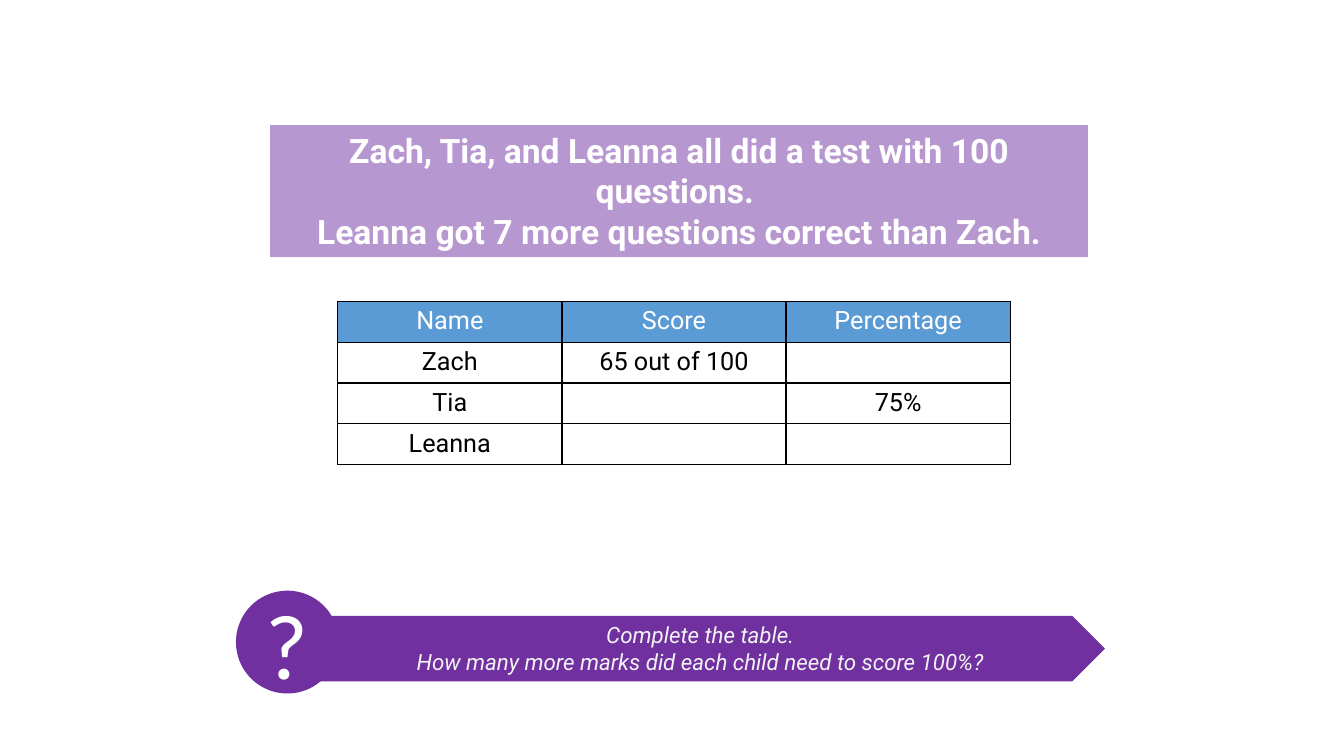
from lxml.etree import SubElement
from pptx import Presentation
from pptx.dml.color import RGBColor
from pptx.enum.shapes import MSO_SHAPE
from pptx.enum.text import MSO_ANCHOR, MSO_AUTO_SIZE, PP_ALIGN
from pptx.oxml import parse_xml
from pptx.oxml.ns import nsdecls, qn
from pptx.util import Inches, Pt

HEAD = ["Zach, Tia, and Leanna all did a test with 100 questions. ",
        "Leanna got 7 more questions correct than Zach."]
ROWS = [("Name", "Score", "Percentage"),
        ("Zach", "65 out of 100", ""),
        ("Tia", "", "75%"),
        ("Leanna", "", "")]
TASK = ["Complete the table.",
        "How many more marks did each child need to score 100%?"]
HUE = {"purple": "7030A0", "blue": "5B9BD5", "white": "FFFFFF",
       "pale": "F2F2F2", "black": "000000"}
BOX = {"head": (2.68, 1.24, 8.11, 1.31), "table": (3.35, 2.99, 6.67, 1.62),
       "arrow": (2.83, 6.11, 8.13, 0.65), "task": (3.1, 6.11, 7.69, 0.64),
       "badge": (2.34, 5.86, 1.02, 1.02)}


def color(name):
    return RGBColor.from_string(HUE[name])


def place(name):
    return [Inches(n) for n in BOX[name]]


def paint(item, name):
    item.fill.solid()
    item.fill.fore_color.rgb = color(name)


def write(frame, lines, size, hue, face="Roboto", bold=False, italic=False):
    frame.text = "\n".join(lines)
    for para in frame.paragraphs:
        para.alignment = PP_ALIGN.CENTER
        font = para.font
        font.name, font.size = face, Pt(size)
        font.bold, font.italic = bold, italic
        font.color.rgb = color(hue)


def add_form(kind, name):
    form = slide.shapes.add_shape(kind, *place(name))
    form.shadow.inherit = False
    form.line.fill.background()
    paint(form, "purple")
    return form


def frame_cell(cell):
    props = cell._tc.get_or_add_tcPr()
    for spot, side in enumerate(("lnL", "lnR", "lnT", "lnB")):
        props.insert(spot, parse_xml(
            f'<a:{side} {nsdecls("a")} w="{Pt(1)}"><a:solidFill>'
            f'<a:srgbClr val="{HUE["black"]}"/></a:solidFill></a:{side}>'))


deck = Presentation()
deck.slide_width, deck.slide_height = Inches(13.33), Inches(7.5)
slide = deck.slides.add_slide(deck.slide_layouts[5])

title = slide.shapes.title
title.left, title.top, title.width, title.height = place("head")
paint(title, "purple")
tint = title._element.spPr.find(".//" + qn("a:srgbClr"))
SubElement(tint, qn("a:alpha"), val="50000")
title.text_frame.auto_size = MSO_AUTO_SIZE.NONE
title.text_frame.vertical_anchor = MSO_ANCHOR.TOP
write(title.text_frame, HEAD, 24, "white", bold=True)

table = slide.shapes.add_table(len(ROWS), len(ROWS[0]), *place("table")).table
for r, row in enumerate(ROWS):
    for c, text in enumerate(row):
        cell = table.cell(r, c)
        paint(cell, "white" if r else "blue")
        write(cell.text_frame, [text], 18, "black" if r else "white")
        frame_cell(cell)

add_form(MSO_SHAPE.PENTAGON, "arrow")
task = slide.shapes.add_textbox(*place("task")).text_frame
task.word_wrap = True
write(task, TASK, 16, "pale", italic=True)

badge = add_form(MSO_SHAPE.OVAL, "badge").text_frame
badge.vertical_anchor = MSO_ANCHOR.MIDDLE
write(badge, ["?"], 66, "white", face="Calibri")

deck.save("out.pptx")
